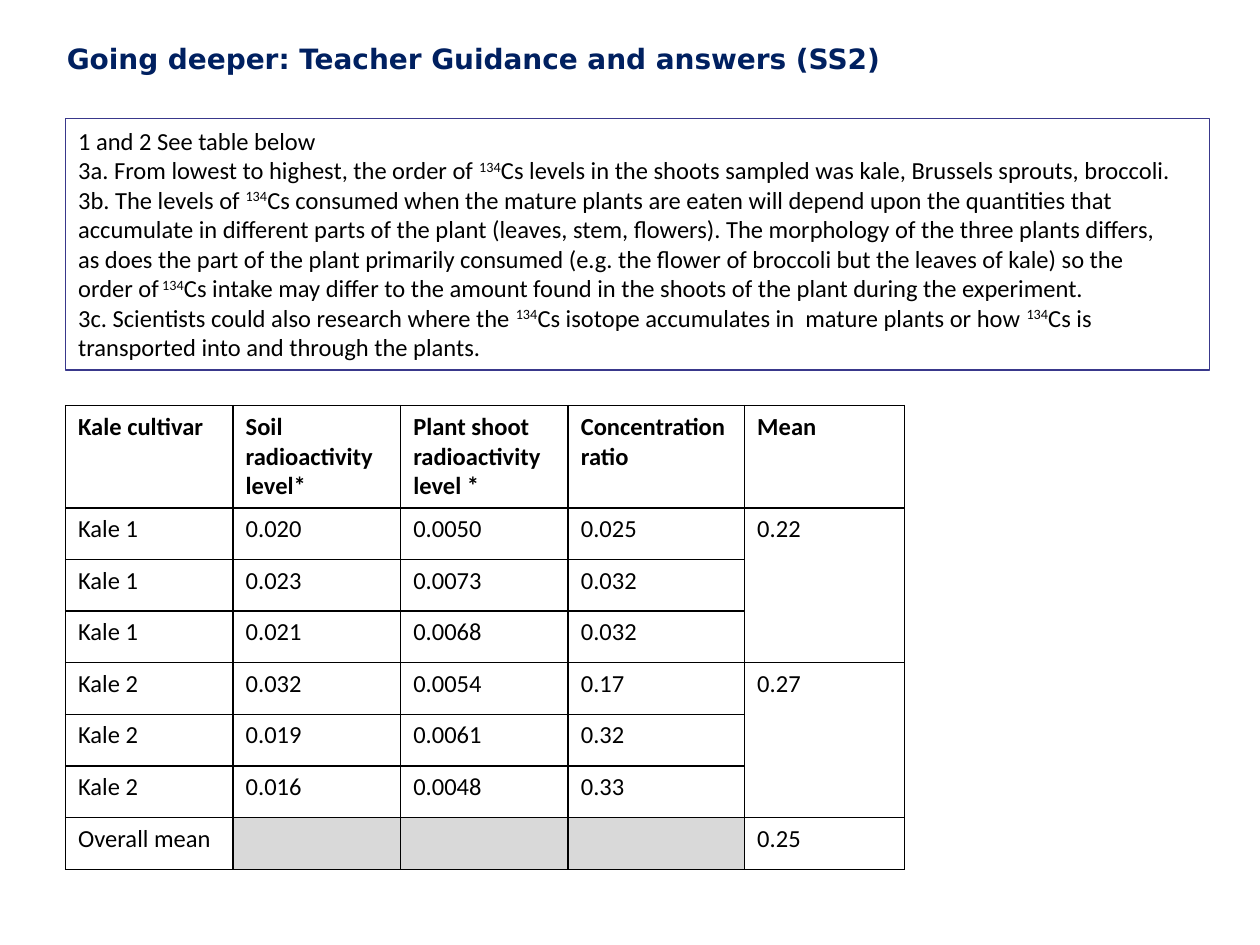
import pptx
import pptx.util
import pptx.dml.color
import pptx.enum.shapes
import pptx.enum.text
import pptx.oxml.ns
import lxml.etree

Inches = pptx.util.Inches
Pt = pptx.util.Pt
RGBColor = pptx.dml.color.RGBColor

BLACK = RGBColor(0x00, 0x00, 0x00)
WHITE = RGBColor(0xFF, 0xFF, 0xFF)
NAVY = RGBColor(0x00, 0x20, 0x60)
INDIGO = RGBColor(0x39, 0x38, 0x8B)
GREY = RGBColor(0xD9, 0xD9, 0xD9)

LEFT = Inches(0.52)
COLUMN_WIDTHS = [1.33, 1.33, 1.33, 1.4, 1.27]
HEADER_HEIGHT = 0.81
ROW_HEIGHT = 0.41

ANSWERS = [
    "1 and 2 See table below",
    "3a. From lowest to highest, the order of ^134^Cs levels in the shoots sampled was kale, "
    "Brussels sprouts, broccoli.",
    "3b. The levels of ^134^Cs consumed when the mature plants are eaten will depend upon the "
    "quantities that accumulate in different parts of the plant (leaves, stem, flowers). The "
    "morphology of the three plants differs, as does the part of the plant primarily consumed "
    "(e.g. the flower of broccoli but the leaves of kale) so the order of^ 134^Cs intake may "
    "differ to the amount found in the shoots of the plant during the experiment.",
    "3c. Scientists could also research where the ^134^Cs isotope accumulates in  mature plants "
    "or how ^134^Cs is transported into and through the plants.",
]

RESULTS = [
    ["Kale cultivar", "Soil radioactivity level*", "Plant shoot radioactivity level *",
     "Concentration ratio", "Mean"],
    ["Kale 1", "0.020", "0.0050", "0.025", "0.22"],
    ["Kale 1", "0.023", "0.0073", "0.032", ""],
    ["Kale 1", "0.021", "0.0068", "0.032", ""],
    ["Kale 2", "0.032", "0.0054", "0.17", "0.27"],
    ["Kale 2", "0.019", "0.0061", "0.32", ""],
    ["Kale 2", "0.016", "0.0048", "0.33", ""],
    ["Overall mean", "", "", "", "0.25"],
]


def style_font(font, name, size, color, bold=False):
    font.name = name
    font.size = Pt(size)
    font.bold = bold
    font.color.rgb = color


def add_borders(cell):
    properties = cell._tc.get_or_add_tcPr()
    for side in ("lnL", "lnR", "lnT", "lnB"):
        line = lxml.etree.SubElement(properties, pptx.oxml.ns.qn("a:" + side), w=str(Pt(1)))
        fill = lxml.etree.SubElement(line, pptx.oxml.ns.qn("a:solidFill"))
        lxml.etree.SubElement(fill, pptx.oxml.ns.qn("a:srgbClr"), val=str(BLACK))


deck = pptx.Presentation()
deck.slide_width = Inches(10)
deck.slide_height = Inches(7.5)
page = deck.slides.add_slide(deck.slide_layouts[1])

title = page.shapes.title
title.left, title.top, title.width, title.height = map(Inches, (0.43, 0.28, 7.34, 0.37))
title.text_frame.text = "Going deeper: Teacher Guidance and answers (SS2)"
title.text_frame.auto_size = pptx.enum.text.MSO_AUTO_SIZE.NONE
title.text_frame.vertical_anchor = pptx.enum.text.MSO_ANCHOR.TOP
heading = title.text_frame.paragraphs[0]
heading.alignment = pptx.enum.text.PP_ALIGN.LEFT
style_font(heading.font, "DejaVu Sans", 16, NAVY, True)

frame = page.shapes.add_shape(
    pptx.enum.shapes.MSO_SHAPE.RECTANGLE, LEFT, Inches(0.94), Inches(9.08), Inches(2))
frame.shadow.inherit = False
frame.fill.background()
frame.line.color.rgb = INDIGO
frame.line.width = Pt(1)

answers = page.placeholders[1]
answers.left, answers.top = LEFT, Inches(0.95)
answers.width, answers.height = Inches(8.91), Inches(1.99)
body = answers.text_frame
body.auto_size = pptx.enum.text.MSO_AUTO_SIZE.NONE
for index, answer in enumerate(ANSWERS):
    para = body.paragraphs[0] if index == 0 else body.add_paragraph()
    para.space_before = Pt(0)
    style_font(para.font, "Calibri", 14, BLACK)
    properties = para._p.get_or_add_pPr()
    properties.set("marL", "0")
    properties.set("indent", "0")
    properties.insert_element_before(
        lxml.etree.Element(pptx.oxml.ns.qn("a:buNone")), "a:tabLst", "a:defRPr", "a:extLst")
    for part, text in enumerate(answer.split("^")):
        span = para.add_run()
        span.text = text
        if part % 2:
            span._r.get_or_add_rPr().set("baseline", "30000")

table = page.shapes.add_table(
    len(RESULTS), len(COLUMN_WIDTHS), LEFT, Inches(3.22),
    Inches(sum(COLUMN_WIDTHS)), Inches(3.64)).table
for column, width in zip(table.columns, COLUMN_WIDTHS):
    column.width = Inches(width)
for row, values in enumerate(RESULTS):
    table.rows[row].height = Inches(ROW_HEIGHT if row else HEADER_HEIGHT)
    for column, value in enumerate(values):
        cell = table.cell(row, column)
        add_borders(cell)
        unused = row == len(RESULTS) - 1 and not value
        cell.fill.solid()
        cell.fill.fore_color.rgb = GREY if unused else WHITE
        cell.text = value
        style_font(cell.text_frame.paragraphs[0].font, "Calibri", 14, BLACK, row == 0)
for first in (1, 4):
    table.cell(first, 4).merge(table.cell(first + 2, 4))

deck.save("out.pptx")
